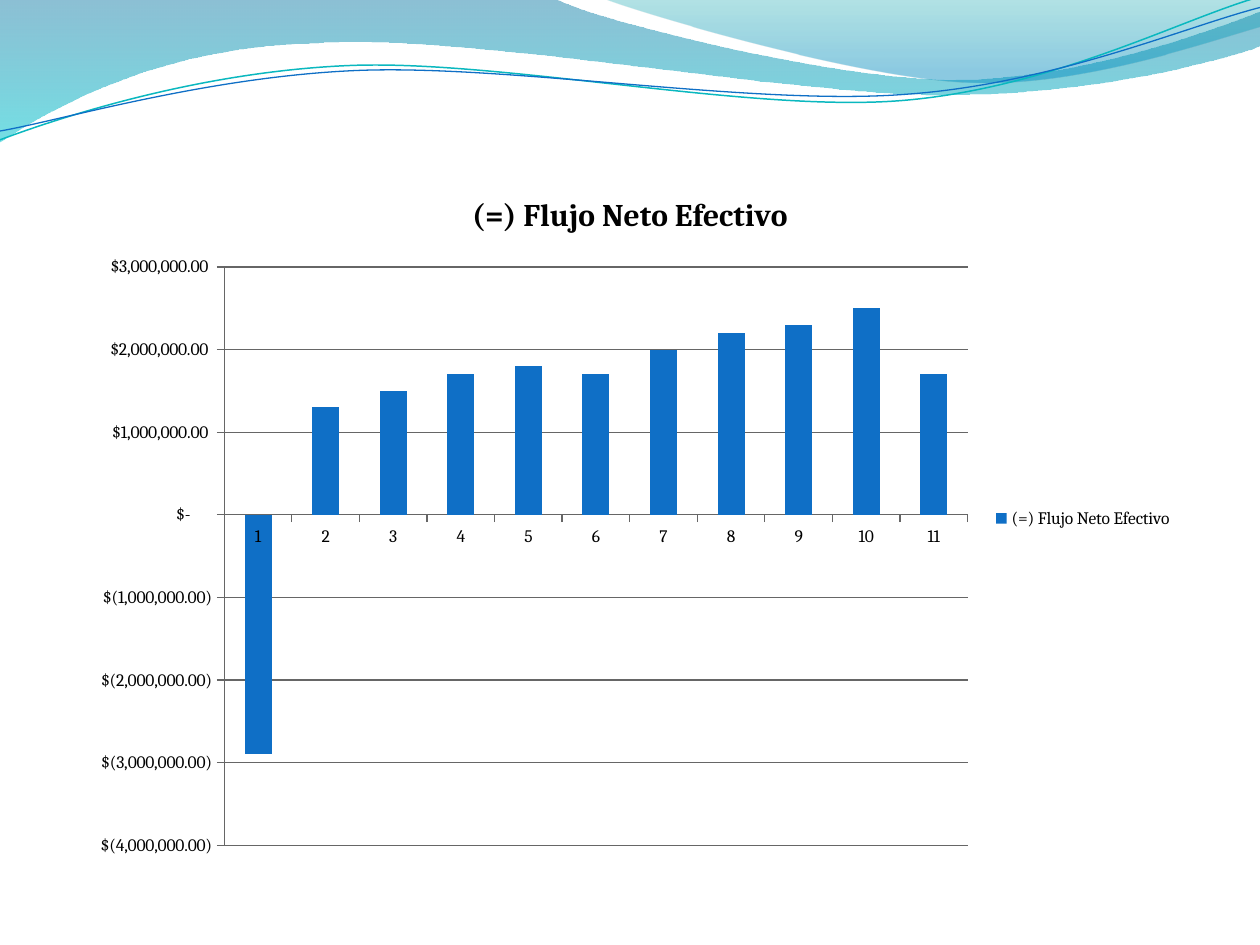
from math import cos, radians, sin

from lxml import etree
from pptx import Presentation
from pptx.chart.data import CategoryChartData
from pptx.dml.color import RGBColor
from pptx.enum.chart import XL_CHART_TYPE, XL_LEGEND_POSITION, XL_TICK_MARK
from pptx.oxml import parse_xml
from pptx.oxml.ns import nsdecls, qn
from pptx.util import Inches, Pt

STACKED = XL_CHART_TYPE.COLUMN_STACKED
RIGHT = XL_LEGEND_POSITION.RIGHT
OUTSIDE = XL_TICK_MARK.OUTSIDE
NO_TICK = XL_TICK_MARK.NONE

FONT = "Cambria"
BLUE, TEAL, GREY, BLACK = "0F6FC6", "0AB8BF", "666666", "000000"
NAME = "(=) Flujo Neto Efectivo"
FLOWS = [-2900000, 1300000, 1500000, 1700000, 1800000, 1700000,
         2000000, 2200000, 2300000, 2500000, 1700000]
MONEY = r'_("$"* #,##0.00_);_("$"* \(#,##0.00\);_("$"* "-"??_);_(@_)'
TILT = 2.7

# Each wave is a start point, then line ends (2 numbers) or Bezier curves (6).
# Points are inches from the corner of the header band.
BACK = [(0, 0), (4.4, -0.01), (4.76, 0.17, 6.64, 0.63, 7.58, 0.63),
        (8.53, 0.63, 9.58, 0.26, 10, 0.09), (10.01, 0.36),
        (9.83, 0.44, 8.7, 0.76, 7.46, 0.75),
        (6.22, 0.75, 3.82, 0.28, 2.57, 0.34),
        (1.29, 0.36, 0.46, 0.83, -0.01, 1.13), (0, 0)]
FRONT = [(4.79, -0.01), (5.09, 0.11, 6.82, 0.62, 7.69, 0.65),
         (8.56, 0.69, 9.61, 0.32, 10, 0.21), (10, 0), (4.79, -0.01)]
UPPER = [(0, 1.11), (0.48, 0.93, 1.58, 0.57, 2.77, 0.52),
         (3.95, 0.47, 5.93, 0.89, 7.13, 0.8),
         (8.33, 0.71, 9.38, 0.15, 9.98, -0.02)]
LOWER = [(0, 1.04), (0.47, 0.96, 1.64, 0.61, 2.83, 0.56),
         (4.03, 0.51, 5.97, 0.84, 7.17, 0.75),
         (8.36, 0.67, 9.41, 0.21, 10, 0.06)]


def color(code):
    return RGBColor.from_string(code)


def turn(wave, center, angle):
    """Turn every point of a wave about a center, clockwise."""
    mid_x, mid_y = center
    c, s = cos(radians(angle)), sin(radians(angle))
    turned = []
    for part in wave:
        moved = []
        for x, y in zip(part[::2], part[1::2]):
            dx, dy = x - mid_x, y - mid_y
            moved += [mid_x + dx * c - dy * s, mid_y + dx * s + dy * c]
        turned.append(tuple(moved))
    return turned


def draw(shapes, left, top, wave, close):
    """Build an outline, joining each curve's three points into one Bezier."""
    start, *rest = [(Inches(left + x), Inches(top + y)) for part in wave
                    for x, y in zip(part[::2], part[1::2])]
    pen = shapes.build_freeform(*start)
    pen.add_line_segments(rest, close=close)
    shape = pen.convert_to_shape()
    shape.shadow.inherit = False
    lines = iter(list(shape._element.spPr.iter(qn("a:lnTo"))))
    for part in wave[1:]:
        first = next(lines)
        if len(part) == 6:
            first.tag = qn("a:cubicBezTo")
            for _ in range(2):
                extra = next(lines)
                first.append(extra[0])
                extra.getparent().remove(extra)
    return shape


def add_band(slide, left, top, wave, *stops):
    """Draw a band filled with (place, color, opacity) stops."""
    shape = draw(slide.shapes, left, top, wave, True)
    shape.line.fill.background()
    shape.fill.gradient()
    shape.fill.gradient_angle = 270
    for stop, (place, code, _) in zip(shape.fill.gradient_stops, stops):
        stop.position = place
        stop.color.rgb = color(code)
    tints = list(shape._element.spPr.iter(qn("a:srgbClr")))
    for tint, (_, _, alpha) in zip(tints, stops):
        etree.SubElement(tint, qn("a:alpha"), val=str(alpha * 1000))


def add_line(group, left, top, wave, center, code, width):
    flat = turn(wave, center, TILT)
    shape = draw(group.shapes, left, top, flat, False)
    shape.rotation = -TILT
    shape.fill.background()
    shape.line.color.rgb = color(code)
    shape.line.width = Pt(width)


def add_header(slide, left, top):
    add_band(slide, left, top, BACK, (0, "0074A1", 45), (1, "00C6CF", 55))
    add_band(slide, left, top, FRONT, (0, "00A1A9", 30), (0.8, "008BBF", 45))
    group = slide.shapes.add_group_shape()
    add_line(group, left, top, UPPER, (4.99, 0.57), TEAL, 0.85)
    add_line(group, left, top, LOWER, (5, 0.59), BLUE, 0.75)


def style(font, size=10, bold=False):
    font.name = FONT
    font.size = Pt(size)
    font.bold = bold
    font.color.rgb = color(BLACK)


def put_text(frame, text, **form):
    frame.text = text
    style(frame.paragraphs[0].runs[0].font, **form)


def rule(line):
    line.color.rgb = color(GREY)
    line.width = Pt(0.75)


def set_plot(chart, **box):
    """Fix the inner plot area, in fractions of the chart."""
    sizes = "".join(f'<c:{key} val="{val:.4f}"/>' for key, val in box.items())
    area = chart._chartSpace.chart.plotArea
    for old in area.findall(qn("c:layout")):
        area.remove(old)
    area.insert(0, parse_xml(
        f'<c:layout {nsdecls("c")}><c:manualLayout>'
        '<c:layoutTarget val="inner"/><c:xMode val="edge"/>'
        f'<c:yMode val="edge"/>{sizes}</c:manualLayout></c:layout>'))


def add_flow(slide, left, top, width, height):
    data = CategoryChartData()
    data.categories = [str(n + 1) for n in range(len(FLOWS))]
    data.add_series(NAME, FLOWS)
    chart = slide.shapes.add_chart(
        STACKED, Inches(left), Inches(top), Inches(width), Inches(height),
        data).chart
    style(chart.font)
    put_text(chart.chart_title.text_frame, NAME, size=18, bold=True)
    chart.chart_title.include_in_layout = False
    chart.has_legend = True
    chart.legend.position = RIGHT
    chart.legend.include_in_layout = False
    style(chart.legend.font)

    plot = chart.plots[0]
    plot.gap_width, plot.overlap = 150, 100
    plot.vary_by_categories = False
    bars = plot.series[0]
    bars.invert_if_negative = False
    bars.format.fill.solid()
    bars.format.fill.fore_color.rgb = color(BLUE)

    for axis in (chart.category_axis, chart.value_axis):
        axis.major_tick_mark, axis.minor_tick_mark = OUTSIDE, NO_TICK
        rule(axis.format.line)
        style(axis.tick_labels.font)
    money = chart.value_axis
    money.minimum_scale, money.maximum_scale = -4000000, 3000000
    money.major_unit = 1000000
    money.has_major_gridlines = True
    rule(money.major_gridlines.format.line)
    money.tick_labels.number_format = MONEY
    money.tick_labels.number_format_is_linked = False
    set_plot(chart, x=1.19 / width, y=0.79 / height,
             w=5.9 / width, h=4.59 / height)


def main():
    deck = Presentation()
    deck.slide_width, deck.slide_height = Inches(10), Inches(7.5)
    slide = deck.slides.add_slide(deck.slide_layouts[6])
    add_header(slide, 0, 0)
    add_flow(slide, 0.59, 1.33, 8.82, 5.57)
    deck.save("out.pptx")


if __name__ == "__main__":
    main()
